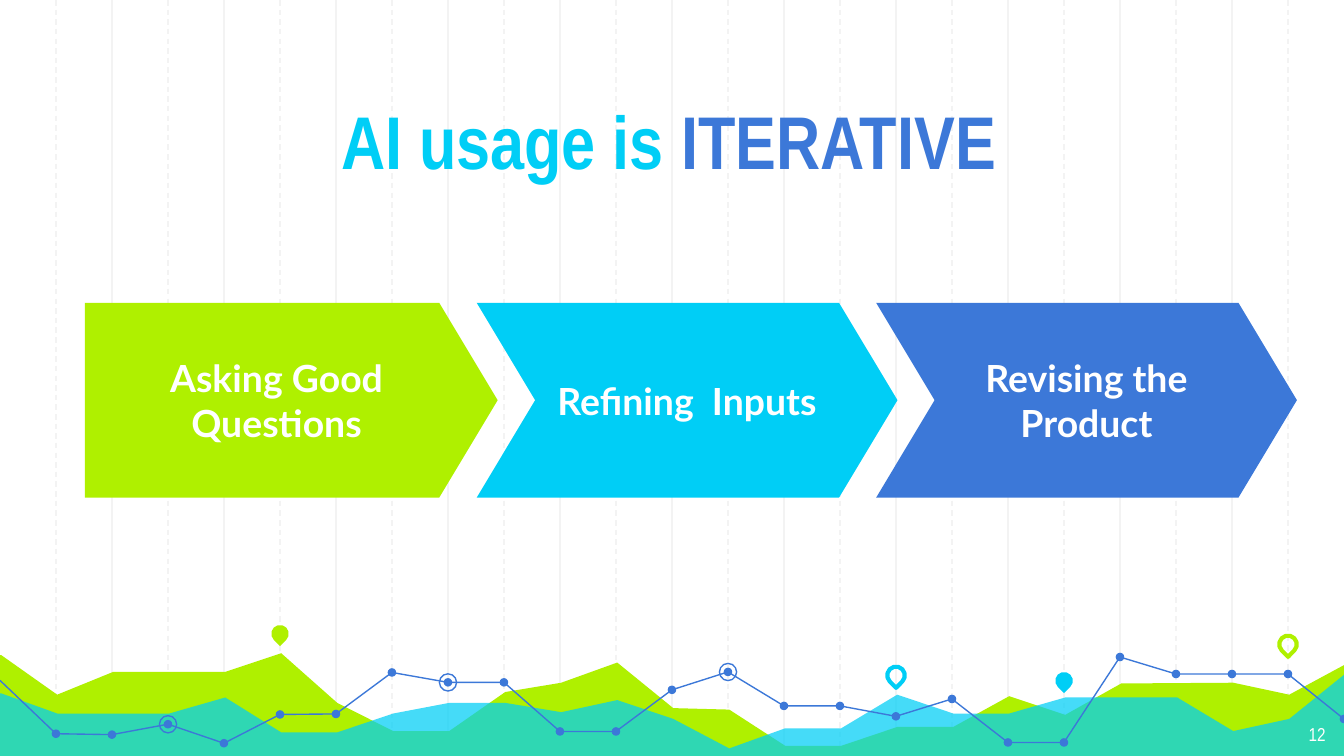
from lxml import etree
from pptx import Presentation
from pptx.dml.color import RGBColor
from pptx.enum.dml import MSO_LINE
from pptx.enum.shapes import MSO_CONNECTOR, MSO_SHAPE
from pptx.enum.text import MSO_ANCHOR, MSO_AUTO_SIZE, PP_ALIGN
from pptx.oxml.ns import qn
from pptx.util import Pt

COLORS = {"lime": "AFF000", "cyan": "00CEF6", "blue": "3C78D8",
          "grid": "F3F3F3", "white": "FFFFFF"}
WIDTH, HEIGHT = 720, 405
COLUMN = 30  # distance between grid lines

# Heights of the background series, keyed by grid column
LIME_AREA = {0: 351, 1: 372.2, 2: 360, 4: 360, 5: 350, 6: 376.6, 7: 391.7,
             8: 391.7, 9: 370.8, 10: 365.8, 11: 355, 12: 379.4, 13: 380.2,
             14: 399.6, 15: 399.6, 16: 389.5, 17: 389.5, 18: 373, 19: 383,
             20: 366.2, 22: 365.8, 23: 372.2, 24: 356}
CYAN_AREA = {0: 371.5, 1: 382.3, 3: 382.3, 4: 373.7, 5: 392.4, 6: 392.4,
             7: 382.3, 8: 376.6, 9: 376.6, 10: 381.6, 11: 375.1, 12: 385.2,
             13: 401, 14: 390.2, 15: 390.2, 16: 372.2, 17: 382.3, 18: 382.3,
             19: 373.7, 21: 373.7, 22: 391.7, 23: 385.2, 24: 361}
TREND = [364.5, 393.1, 393.6, 388, 398.2, 382.8, 382.5, 360.3, 365.6, 365.6,
         391.9, 391.9, 369.6, 360, 378.2, 378.2, 383.8, 374.5, 397.8, 397.8,
         352, 361.1, 361.1, 361.1, 385.2]
RINGED = (3, 8, 13)
PINS = [(5, 339.5, "lime", True), (16, 361.8, "cyan", False),
        (19, 364.7, "cyan", True), (23, 345.2, "lime", False)]
STEPS = [(MSO_SHAPE.PENTAGON, 45.4, 221.2, "Asking Good Questions", "lime"),
         (MSO_SHAPE.CHEVRON, 255.4, 225.4, "Refining  Inputs", "cyan"),
         (MSO_SHAPE.CHEVRON, 469.4, 225.4, "Revising the Product", "blue")]


def rgb(color):
    return RGBColor.from_string(COLORS[color])


class Deck:
    heading_font, body_font = "Arial Narrow", "Lato"

    def __init__(self):
        self.prs = Presentation()
        self.prs.slide_width, self.prs.slide_height = Pt(WIDTH), Pt(HEIGHT)
        self.s = self.prs.slides.add_slide(self.prs.slide_layouts[5])

    def paint(self, sp, fill=None, line=None, weight=0.75):
        sp.shadow.inherit = False
        if fill:
            sp.fill.solid()
            sp.fill.fore_color.rgb = rgb(fill)
        else:
            sp.fill.background()
        if line:
            sp.line.color.rgb = rgb(line)
            sp.line.width = Pt(weight)
        else:
            sp.line.fill.background()
        return sp

    def format_text(self, tf, font, size, colors, align, anchor, bold=True):
        """Format the first paragraph, giving each run its own colour."""
        tf.word_wrap = True
        tf.auto_size = MSO_AUTO_SIZE.NONE
        tf.vertical_anchor = anchor
        tf.margin_left = tf.margin_right = Pt(7.2)
        tf.margin_top = tf.margin_bottom = Pt(7.2)
        p = tf.paragraphs[0]
        p.alignment = align
        for r, color in zip(p.runs, colors):
            r.font.name, r.font.size, r.font.bold = font, Pt(size), bold
            r.font.color.rgb = rgb(color)

    def grid_line(self, x, dashed):
        c = self.s.shapes.add_connector(
            MSO_CONNECTOR.STRAIGHT, Pt(x), Pt(0), Pt(x), Pt(HEIGHT))
        c.line.color.rgb = rgb("grid")
        c.line.width = Pt(0.75)
        if dashed:
            c.line.dash_style = MSO_LINE.DASH
        etree.SubElement(c.element.spPr, qn("a:effectLst"))

    def outline(self, points, close):
        points = [(Pt(x), Pt(y)) for x, y in points]
        builder = self.s.shapes.build_freeform(*points[0])
        builder.add_line_segments(points[1:], close=close)
        return builder.convert_to_shape()

    def area(self, heights, color, opacity=100):
        points = [(COLUMN * col + 0.7, y) for col, y in heights.items()]
        points = [(-1.5, points[0][1])] + points
        points += [(points[-1][0], HEIGHT + 1), (-1.5, HEIGHT + 1)]
        sp = self.paint(self.outline(points, True), fill=color)
        if opacity < 100:
            clr = sp.element.spPr.find(qn("a:solidFill")).find(qn("a:srgbClr"))
            etree.SubElement(clr, qn("a:alpha"), val=str(opacity * 1000))

    def trend_line(self, heights):
        points = [(COLUMN * col, y) for col, y in enumerate(heights)]
        self.paint(self.outline(points, False), line="blue")

    def marker(self, kind, col, y, size, **style):
        """Centre a small shape on a grid column."""
        sp = self.s.shapes.add_shape(kind, Pt(COLUMN * col - size / 2),
                                     Pt(y - size / 2), Pt(size), Pt(size))
        return self.paint(sp, **style)

    def pin(self, col, y, color, solid):
        style = {"fill": color} if solid else {"line": color, "weight": 2.25}
        self.marker(MSO_SHAPE.TEAR, col, y, 9.4, **style).rotation = 135

    def title(self, parts):
        sp = self.s.shapes.title
        sp.element.getparent().append(sp.element)  # bring in front of the grid
        sp.left, sp.top, sp.width, sp.height = Pt(82.8), Pt(49.7), Pt(550.8), Pt(56.2)
        p = sp.text_frame.paragraphs[0]
        for text, _ in parts:
            p.add_run().text = text
        self.format_text(sp.text_frame, self.heading_font, 40,
                         [color for _, color in parts],
                         PP_ALIGN.CENTER, MSO_ANCHOR.BOTTOM)

    def step(self, kind, left, width, text, color):
        sp = self.s.shapes.add_shape(kind, Pt(left), Pt(162.2), Pt(width), Pt(104.4))
        sp.adjustments[0] = 0.3
        self.paint(sp, fill=color)
        sp.text_frame.text = text
        self.format_text(sp.text_frame, self.body_font, 20, ["white"],
                         PP_ALIGN.CENTER, MSO_ANCHOR.MIDDLE)

    def page_number(self, number):
        tb = self.s.shapes.add_textbox(Pt(674), Pt(380.2), Pt(43.2), Pt(25))
        tb.text_frame.text = number
        self.format_text(tb.text_frame, self.heading_font, 10, ["white"],
                         PP_ALIGN.RIGHT, MSO_ANCHOR.TOP, bold=False)


def main():
    deck = Deck()
    for col in range(1, 24):
        deck.grid_line(COLUMN * col, dashed=col % 2 == 1)
    deck.area(LIME_AREA, "lime")
    deck.area(CYAN_AREA, "cyan", opacity=73)
    deck.trend_line(TREND)
    for col, y in enumerate(TREND[1:], start=1):
        deck.marker(MSO_SHAPE.OVAL, col, y, 4.6, fill="blue")
    for col in RINGED:
        deck.marker(MSO_SHAPE.OVAL, col, TREND[col], 9.2, line="blue")
    for pin in PINS:
        deck.pin(*pin)
    deck.title([("AI usage is ", "cyan"), ("ITERATIVE", "blue")])
    for step in STEPS:
        deck.step(*step)
    deck.page_number("12")
    deck.prs.save("out.pptx")


if __name__ == "__main__":
    main()
